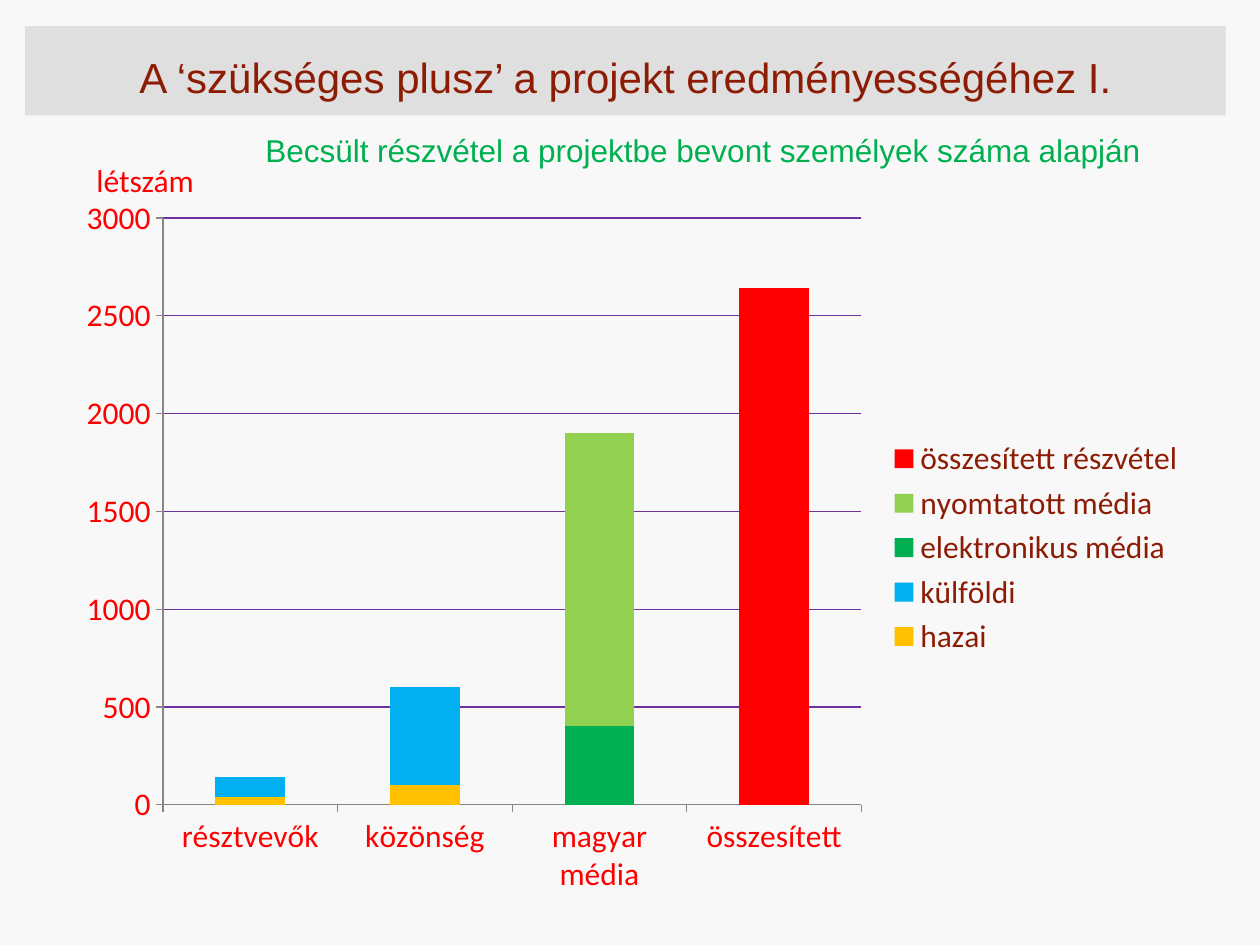
from lxml import etree
from pptx import Presentation
from pptx.chart.data import CategoryChartData
from pptx.dml.color import RGBColor
from pptx.enum import chart as ch, shapes, text
from pptx.oxml.ns import qn
from pptx.util import Pt

TITLE = "A ‘szükséges plusz’ a projekt eredményességéhez I."
SUBTITLE = "Becsült részvétel a projektbe bevont személyek száma alapján"
AXIS_LABEL = "létszám"
CATEGORIES = ["résztvevők", "közönség", "magyar média", "összesített"]
SERIES = [
    ("hazai", (40, 100, None, None), "FFC000"),
    ("külföldi", (100, 500, None, None), "00B0F0"),
    ("elektronikus média", (None, None, 400, None), "00B050"),
    ("nyomtatott média", (None, None, 1500, None), "92D050"),
    ("összesített részvétel", (None, None, None, 2640), "FF0000"),
]
PLOT = {"x": 0.087, "y": 0.045, "w": 0.616, "h": 0.81}  # shares of the chart frame
THEME = {
    "background": "F8F8F8", "band": "DFDFDF", "brown": "8D1C05",
    "green": "00B050", "red": "FF0000", "grid": "7030A0", "axis": "868686",
    "heading": "Arial", "body": "Calibri", "title": 24, "text": 18,
}


def rgb(name):
    return RGBColor.from_string(THEME.get(name, name))


def set_font(font, face, size, color):
    font.name, font.size = THEME[face], Pt(THEME[size])
    font.color.rgb = rgb(color)


def fill(obj, color):
    obj.fill.solid()
    obj.fill.fore_color.rgb = rgb(color)


def add_label(s, box, label, face, color):
    tf = s.shapes.add_textbox(*map(Pt, box)).text_frame
    tf.word_wrap = True
    p = tf.paragraphs[0]
    p.text = label
    set_font(p.font, face, "text", color)


def add_title(s, box):
    sp = s.shapes.add_shape(shapes.MSO_SHAPE.RECTANGLE, *map(Pt, box))
    sp.shadow.inherit = False
    fill(sp, "band")
    sp.line.fill.background()
    tf = sp.text_frame
    tf.word_wrap = True
    tf.vertical_anchor = text.MSO_ANCHOR.MIDDLE
    tf.margin_top = Pt(10)
    p = tf.paragraphs[0]
    p.text = TITLE
    p.alignment = text.PP_ALIGN.CENTER
    set_font(p.font, "heading", "title", "brown")


def fix_plot_area(chart):
    """Pin the inner plot area to the shares in PLOT."""
    area = chart._chartSpace.chart.plotArea
    for old in area.findall(qn("c:layout")):
        area.remove(old)
    layout = etree.Element(qn("c:layout"))
    area.insert(0, layout)
    manual = etree.SubElement(layout, qn("c:manualLayout"))
    settings = {"layoutTarget": "inner", "xMode": "edge", "yMode": "edge", **PLOT}
    for tag, value in settings.items():
        etree.SubElement(manual, qn(f"c:{tag}")).set("val", str(value))


def add_attendance_chart(s, box):
    data = CategoryChartData()
    data.categories = CATEGORIES
    for name, values, _ in SERIES:
        data.add_series(name, values)
    chart = s.shapes.add_chart(ch.XL_CHART_TYPE.COLUMN_STACKED,
                               *map(Pt, box), data).chart
    chart.has_title = False
    set_font(chart.font, "body", "text", "brown")
    plot = chart.plots[0]
    plot.gap_width, plot.overlap, plot.vary_by_categories = 150, 100, False
    for series, (_, _, color) in zip(plot.series, SERIES):
        fill(series.format, color)

    for axis in (chart.category_axis, chart.value_axis):
        set_font(axis.tick_labels.font, "body", "text", "red")
        axis.major_tick_mark = ch.XL_TICK_MARK.OUTSIDE
        axis.format.line.color.rgb = rgb("axis")
        axis.format.line.width = Pt(0.75)
    value_axis = chart.value_axis
    value_axis.minimum_scale, value_axis.maximum_scale = 0, 3000
    value_axis.major_unit = 500
    grid = value_axis.major_gridlines.format.line
    grid.color.rgb, grid.width = rgb("grid"), Pt(0.75)

    chart.has_legend = True
    chart.legend.position = ch.XL_LEGEND_POSITION.RIGHT
    chart.legend.include_in_layout = False
    set_font(chart.legend.font, "body", "text", "brown")
    fix_plot_area(chart)


def main():
    prs = Presentation()
    prs.slide_width, prs.slide_height = Pt(720), Pt(540)
    s = prs.slides.add_slide(prs.slide_layouts[6])
    fill(s.background, "background")
    add_title(s, (14.4, 15, 686, 51))
    add_attendance_chart(s, (36.75, 106, 648, 414))
    add_label(s, (144.5, 71.5, 516, 29), SUBTITLE, "heading", "green")
    add_label(s, (48, 88.5, 73.5, 29), AXIS_LABEL, "body", "red")
    prs.save("out.pptx")


if __name__ == "__main__":
    main()
